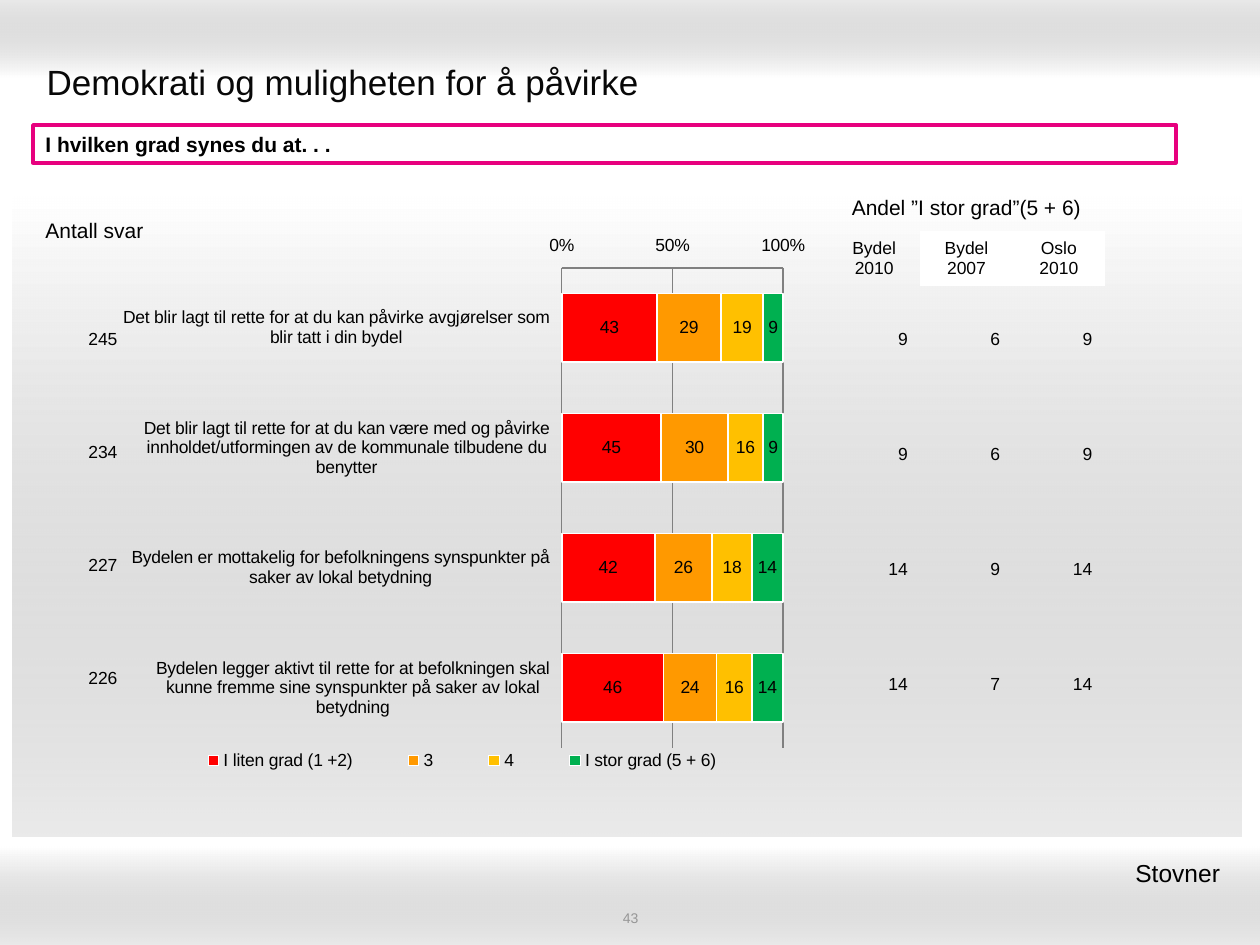
"""Build the slide on democracy and influence in the Stovner district."""
from dataclasses import dataclass

from lxml.etree import SubElement
from pptx import Presentation
from pptx.chart.data import CategoryChartData
from pptx.dml.color import RGBColor
from pptx.enum.chart import XL_CHART_TYPE, XL_LEGEND_POSITION, XL_TICK_LABEL_POSITION, XL_TICK_MARK
from pptx.enum.shapes import MSO_SHAPE
from pptx.enum.text import MSO_ANCHOR, PP_ALIGN
from pptx.oxml import parse_xml
from pptx.oxml.ns import nsdecls, qn
from pptx.util import Emu, Pt

EMU_PER_PX = 914400 / 126
FONT = "Arial"
NO_GRID_STYLE = "{2D5ABB26-0587-4C30-8999-92F81FD0307C}"
COLORS = {
    "black": "000000", "title": "080808", "white": "FFFFFF", "gray": "999999",
    "number": "969696", "pink": "E7007E", "grid": "808080",
    "red": "FF0000", "orange": "FF9900", "yellow": "FFC000", "green": "00B050",
}


@dataclass(frozen=True)
class Area:
    left: int
    top: int
    width: int
    height: int

    def emu(self) -> tuple:
        return tuple(px(v) for v in (self.left, self.top, self.width, self.height))


@dataclass(frozen=True)
class Band:
    area: Area
    angle: int


@dataclass(frozen=True)
class Answer:
    name: str
    values: tuple
    color: str


@dataclass(frozen=True)
class Grid:
    area: Area
    rows: tuple
    row_heights: tuple
    align: PP_ALIGN = PP_ALIGN.RIGHT
    size: int = 10


BANDS = (
    Band(Area(0, 0, 1260, 78), 270),
    Band(Area(0, 847, 1260, 98), 90),
    Band(Area(13, 197, 1228, 640), 90),
)
QUESTIONS = (
    "Det blir lagt til rette for at du kan påvirke avgjørelser som blir tatt i din bydel",
    "Det blir lagt til rette for at du kan være med og påvirke "
    "innholdet/utformingen av de kommunale tilbudene du benytter",
    "Bydelen er mottakelig for befolkningens synspunkter på saker av lokal betydning",
    "Bydelen legger aktivt til rette for at befolkningen skal kunne fremme "
    "sine synspunkter på saker av lokal betydning",
)
ANSWERS = (
    Answer("I liten grad (1 +2)", (43, 45, 42, 46), "red"),
    Answer("3", (29, 30, 26, 24), "orange"),
    Answer("4", (19, 16, 18, 16), "yellow"),
    Answer("I stor grad (5 + 6)", (9, 9, 14, 14), "green"),
)
SHARES = Grid(Area(828, 282, 277, 459),
              (("9", "6", "9"), ("9", "6", "9"), ("14", "9", "14"), ("14", "7", "14")), (115,) * 4)
HEADINGS = Grid(Area(828, 185, 277, 101),
                (("Andel ”I stor grad”(5 + 6)", "", ""),
                 ("Bydel\n2010", "Bydel\n2007", "Oslo\n2010")), (46, 55), PP_ALIGN.CENTER)
COUNTS = Grid(Area(64, 283, 66, 452), (("245",), ("234",), ("227",), ("226",)), (113,) * 4)
COUNT_LABEL = Grid(Area(5, 194, 179, 74), (("Antall svar",),), (74,), PP_ALIGN.CENTER, 12)


def px(length: float) -> Emu:
    return Emu(round(length * EMU_PER_PX))


def rgb(name: str) -> RGBColor:
    return RGBColor.from_string(COLORS[name])


def write(frame, text: str, *, size: int, color: str = "black", bold: bool = False,
          align: PP_ALIGN = PP_ALIGN.LEFT) -> None:
    for index, line in enumerate(text.split("\n")):
        para = frame.paragraphs[0] if index == 0 else frame.add_paragraph()
        para.alignment = align
        span = para.add_run()
        span.text = line
        span.font.name, span.font.size, span.font.bold = FONT, Pt(size), bold
        span.font.color.rgb = rgb(color)


def add_box(page, area: Area):
    box = page.shapes.add_shape(MSO_SHAPE.RECTANGLE, *area.emu())
    box.shadow.inherit = False
    return box


def add_band(page, band: Band) -> None:
    box = add_box(page, band.area)
    box.line.fill.background()
    box.fill.background()
    properties = box.element.spPr
    gradient = parse_xml(
        f'<a:gradFill {nsdecls("a")} rotWithShape="1"><a:gsLst>'
        f'<a:gs pos="0"><a:srgbClr val="{COLORS["white"]}"/></a:gs>'
        f'<a:gs pos="100000"><a:srgbClr val="{COLORS["gray"]}"><a:alpha val="20000"/></a:srgbClr></a:gs>'
        f'</a:gsLst><a:lin ang="{band.angle * 60000}" scaled="1"/></a:gradFill>')
    properties.replace(properties.find(qn("a:noFill")), gradient)


def add_label(page, area: Area, text: str, right_inset: int = 12, **text_format) -> None:
    frame = page.shapes.add_textbox(*area.emu()).text_frame
    frame.word_wrap = True
    frame.vertical_anchor = MSO_ANCHOR.MIDDLE
    frame.margin_top = frame.margin_bottom = 0
    frame.margin_right = px(right_inset)
    write(frame, text, **text_format)


def add_grid(page, grid: Grid):
    columns = len(grid.rows[0])
    table = page.shapes.add_table(len(grid.rows), columns, *grid.area.emu()).table
    table.first_row = table.horz_banding = False
    table._tbl.tblPr.find(qn("a:tableStyleId")).text = NO_GRID_STYLE
    for column in table.columns:
        column.width = px(grid.area.width / columns)
    for row, height, texts in zip(table.rows, grid.row_heights, grid.rows):
        row.height = px(height)
        for cell, text in zip(row.cells, texts):
            cell.fill.background()
            cell.vertical_anchor = MSO_ANCHOR.MIDDLE
            if text:
                write(cell.text_frame, text, size=grid.size, align=grid.align)
    return table


def add_headings(page) -> None:
    table = add_grid(page, HEADINGS)
    table.cell(0, 0).merge(table.cell(0, 2))
    table.cell(0, 0).text_frame.paragraphs[0].runs[0].font.size = Pt(12)
    for column in (1, 2):
        cell = table.cell(1, column)
        cell.fill.solid()
        cell.fill.fore_color.rgb = rgb("white")


def place(element, before: str, chart_area: Area, area: Area, target: str = "") -> None:
    layout = element.find(qn("c:layout"))
    if layout is not None:
        element.remove(layout)
    layout = parse_xml(f'<c:layout {nsdecls("c")}/>')
    element.find(qn(before)).addprevious(layout)
    manual = SubElement(layout, qn("c:manualLayout"))
    settings = {"layoutTarget": target} if target else {}
    settings |= {"xMode": "edge", "yMode": "edge",
                 "x": round((area.left - chart_area.left) / chart_area.width, 4),
                 "y": round((area.top - chart_area.top) / chart_area.height, 4),
                 "w": round(area.width / chart_area.width, 4),
                 "h": round(area.height / chart_area.height, 4)}
    for tag, value in settings.items():
        SubElement(manual, qn(f"c:{tag}")).set("val", str(value))


def add_answers_chart(page, area: Area) -> None:
    data = CategoryChartData(number_format="0")
    data.categories = QUESTIONS
    for answer in ANSWERS:
        data.add_series(answer.name, answer.values)
    chart = page.shapes.add_chart(XL_CHART_TYPE.BAR_STACKED, *area.emu(), data).chart
    chart.font.name, chart.font.size = FONT, Pt(10)
    chart.font.color.rgb = rgb("black")
    chart.has_title = False
    chart.has_legend = True
    chart.legend.position = XL_LEGEND_POSITION.BOTTOM
    chart.legend.include_in_layout = False
    plot = chart.plots[0]
    plot.gap_width, plot.overlap, plot.vary_by_categories = 75, 100, False
    for series, answer in zip(plot.series, ANSWERS):
        series.format.fill.solid()
        series.format.fill.fore_color.rgb = rgb(answer.color)
        series.format.line.color.rgb = rgb("white")
        series.format.line.width = Pt(1)
        labels = series.data_labels
        labels.show_value, labels.number_format, labels.number_format_is_linked = True, "0", False
    questions, percent = chart.category_axis, chart.value_axis
    questions.reverse_order = True
    questions.major_tick_mark = XL_TICK_MARK.NONE
    percent.major_tick_mark = XL_TICK_MARK.INSIDE
    percent.minimum_scale, percent.maximum_scale, percent.major_unit = 0, 100, 50
    percent.tick_labels.number_format = r"General\%"
    percent.tick_labels.number_format_is_linked = False
    percent.has_major_gridlines = True
    for axis in (questions, percent):
        axis.tick_label_position = XL_TICK_LABEL_POSITION.LOW
    for line in (questions.format.line, percent.format.line, percent.major_gridlines.format.line):
        line.color.rgb = rgb("grid")
        line.width = Pt(0.75)
    place(chart._chartSpace.chart.plotArea, "c:barChart", area, Area(561, 268, 222, 480), "inner")
    place(chart.legend._element, "c:overlay", area, Area(156, 748, 610, 25))


def main() -> None:
    deck = Presentation()
    deck.slide_width, deck.slide_height = px(1260), px(945)
    page = deck.slides.add_slide(deck.slide_layouts[5])
    for band in BANDS:
        add_band(page, band)
    title = page.shapes.title
    title.element.getparent().append(title.element)
    title.left, title.top, title.width, title.height = Area(34, 47, 1191, 69).emu()
    title.text_frame.vertical_anchor = MSO_ANCHOR.MIDDLE
    write(title.text_frame, "Demokrati og muligheten for å påvirke", size=20, color="title")
    add_label(page, Area(431, 909, 399, 18), "43", size=8, color="number", align=PP_ALIGN.CENTER)
    question = add_box(page, Area(33, 125, 1143, 38))
    question.fill.solid()
    question.fill.fore_color.rgb = rgb("white")
    question.line.color.rgb = rgb("pink")
    question.line.width = Pt(2)
    write(question.text_frame, "I hvilken grad synes du at. . .", size=12, bold=True)
    add_answers_chart(page, Area(123, 226, 694, 572))
    add_grid(page, SHARES)
    add_headings(page)
    add_grid(page, COUNTS)
    add_grid(page, COUNT_LABEL)
    add_label(page, Area(769, 851, 471, 43), "Stovner", right_inset=20, size=14, align=PP_ALIGN.RIGHT)
    deck.save("out.pptx")


if __name__ == "__main__":
    main()
